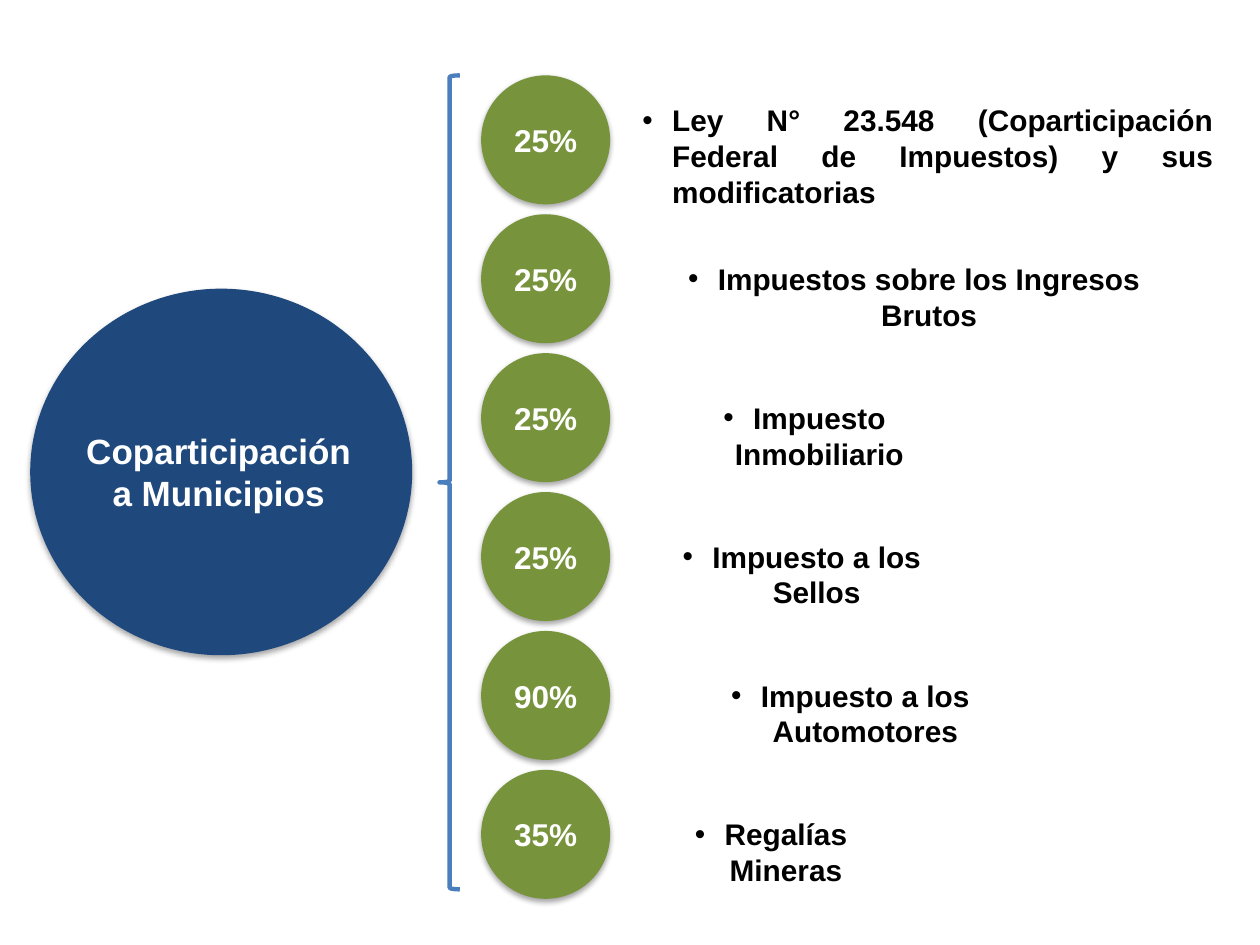
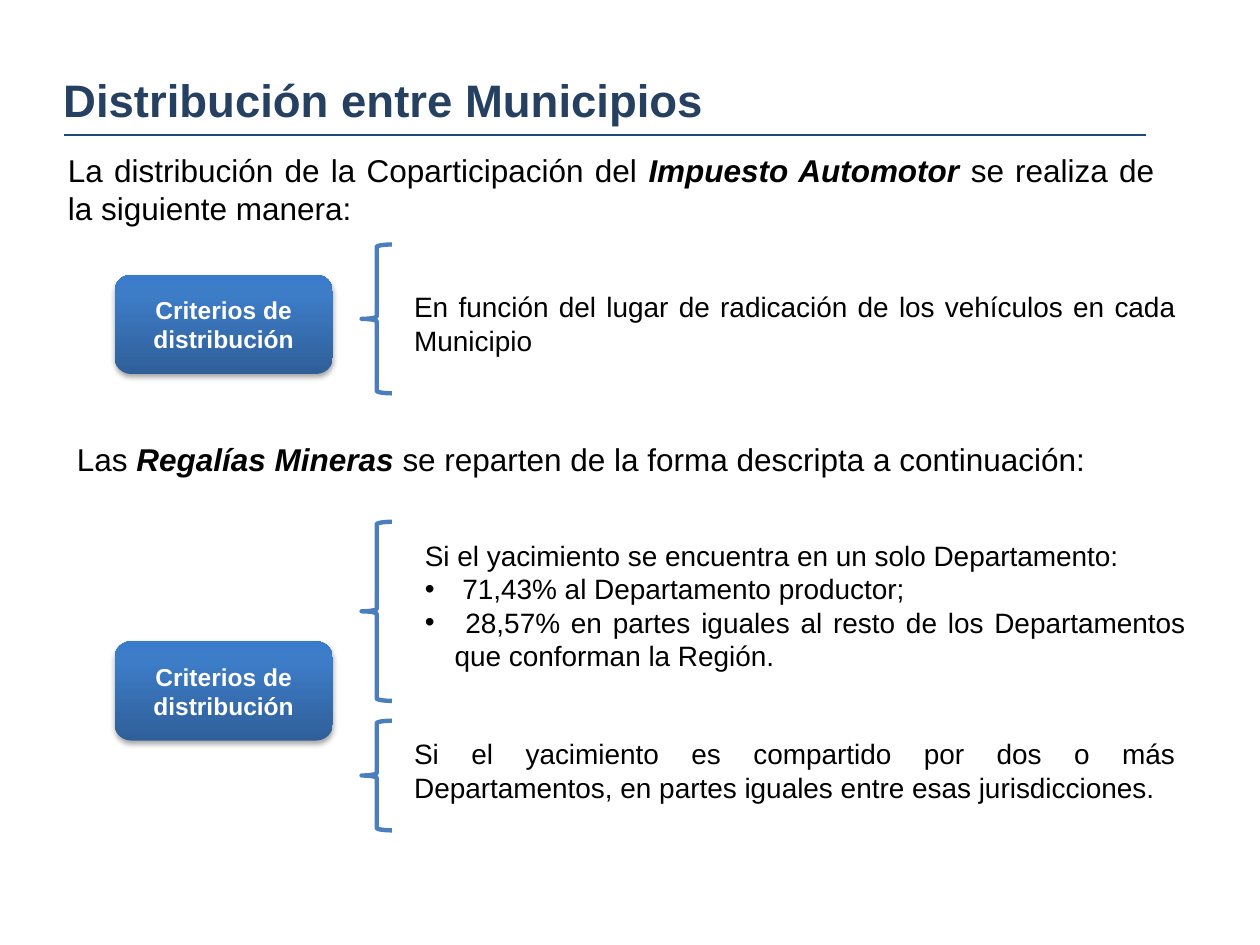
import pptx
import pptx.dml.color
import pptx.enum.dml
import pptx.enum.shapes
import pptx.enum.text
import pptx.oxml.ns
import pptx.util
import copy
from lxml import etree

Cm = pptx.util.Cm
Pt = pptx.util.Pt
ALIGN = pptx.enum.text.PP_ALIGN
ANCHOR = pptx.enum.text.MSO_ANCHOR
SHAPE = pptx.enum.shapes.MSO_SHAPE
qn = pptx.oxml.ns.qn

FONT = "Arial"
NAVY, GREEN, BRACE_BLUE = "1F497D", "77933C", "4B7EBC"
TITLE_BLUE, BLACK, WHITE = "254061", "000000", "FFFFFF"
BUTTON_STOPS = [(0, "2F5F99"), (0.8, "3D7CC7"), (1, "3A7CCB")]
BULLET_INDENT = Cm(0.6)

SOURCES = [  # share, tax, text width in cm
    ("25%", "Ley N° 23.548 (Coparticipación Federal de Impuestos) y sus modificatorias", 12.01),
    ("25%", "Impuestos sobre los Ingresos Brutos", 11.46),
    ("25%", "Impuesto Inmobiliario", 7.04),
    ("25%", "Impuesto a los Sellos", 6.93),
    ("90%", "Impuesto a los Automotores", 8.89),
    ("35%", "Regalías Mineras", 5.69),
]


def rgb(value):
    return pptx.dml.color.RGBColor.from_string(value)


def box(left, top, width, height):
    return Cm(left), Cm(top), Cm(width), Cm(height)


def set_bullet(p, bulleted):
    pPr = p._p.get_or_add_pPr()
    pPr.set("marL", str(BULLET_INDENT if bulleted else 0))
    pPr.set("indent", str(-BULLET_INDENT if bulleted else 0))
    if bulleted:
        etree.SubElement(pPr, qn("a:buFont"), typeface=FONT)
        etree.SubElement(pPr, qn("a:buChar"), char="•")
    else:
        etree.SubElement(pPr, qn("a:buNone"))


def write(tf, lines, size, color=BLACK, bold=False, align=ALIGN.JUSTIFY, anchor=ANCHOR.TOP):
    """Fill a frame; a line starting with • is a bullet, *text* is bold italic."""
    tf.word_wrap = True
    tf.auto_size = pptx.enum.text.MSO_AUTO_SIZE.NONE
    tf.vertical_anchor = anchor
    for i, line in enumerate(lines):
        p = tf.add_paragraph() if i else tf.paragraphs[0]
        set_bullet(p, line.startswith("•"))
        p.alignment = align
        p.space_before = Pt(0)
        for j, piece in enumerate(line.removeprefix("•").split("*")):
            r = p.add_run()
            r.text = piece
            emphasis = j % 2 == 1
            r.font.name, r.font.size = FONT, Pt(size)
            r.font.color.rgb = rgb(color)
            r.font.bold = bold or emphasis
            r.font.italic = emphasis


def add_text(slide, place, lines, size, **style):
    sp = slide.shapes.add_textbox(*box(*place))
    write(sp.text_frame, lines, size, **style)


def add_soft_shadow(sp):
    sp.shadow.inherit = False
    effects = sp._element.spPr.find(qn("a:effectLst"))
    shadow = etree.SubElement(effects, qn("a:outerShdw"), blurRad="40000",
                              dist="23000", dir="5400000", rotWithShape="0")
    color = etree.SubElement(shadow, qn("a:srgbClr"), val=BLACK)
    etree.SubElement(color, qn("a:alpha"), val="35000")


def add_label_shape(slide, kind, place, text, size):
    """Borderless shadowed shape with centred bold white text."""
    sp = slide.shapes.add_shape(kind, *box(*place))
    sp.line.fill.background()
    add_soft_shadow(sp)
    write(sp.text_frame, [text], size, WHITE, True, ALIGN.CENTER, ANCHOR.MIDDLE)
    return sp


def add_circle(slide, place, text, size, color):
    sp = add_label_shape(slide, SHAPE.OVAL, place, text, size)
    sp.fill.solid()
    sp.fill.fore_color.rgb = rgb(color)
    tf = sp.text_frame
    tf.margin_left = tf.margin_right = 0
    return sp


def add_criteria_button(slide, top):
    sp = add_label_shape(slide, SHAPE.ROUNDED_RECTANGLE, (2.31, top, 4.4, 2),
                         "Criterios de distribución", 14)
    sp.fill.gradient()
    sp.fill.gradient_angle = 90
    stop_list = sp._element.spPr.find(qn("a:gradFill")).find(qn("a:gsLst"))
    stop_list.append(copy.deepcopy(stop_list[-1]))
    for stop, (position, color) in zip(sp.fill.gradient_stops, BUTTON_STOPS):
        stop.color.rgb = rgb(color)
        stop.position = position


def add_brace(slide, place):
    sp = slide.shapes.add_shape(SHAPE.LEFT_BRACE, *box(*place))
    sp.fill.background()
    sp.line.color.rgb = rgb(BRACE_BLUE)
    sp.line.width = Pt(2.5)
    sp.shadow.inherit = False


def add_rule(slide, left, right, y):
    line = slide.shapes.add_connector(pptx.enum.shapes.MSO_CONNECTOR.STRAIGHT,
                                      Cm(left), Cm(y), Cm(right), Cm(y))
    line.line.color.rgb = rgb(NAVY)
    line.line.width = Pt(1.5)
    etree.SubElement(line._element.spPr, qn("a:effectLst"))


def fill_placeholder(sp, place, lines, size, **style):
    sp.left, sp.top, sp.width, sp.height = box(*place)
    write(sp.text_frame, lines, size, **style)


def build_shares(prs):
    slide = prs.slides.add_slide(prs.slide_layouts[6])
    add_brace(slide, (8.86, 1.52, 0.41, 16.41))
    hub = add_circle(slide, (0.61, 5.82, 7.7, 7.39), "Coparticipación a Municipios", 20, NAVY)
    hub.text_frame.margin_right = Cm(0.1)

    first_top, step = 1.52, 2.8
    for i, (share, tax, width) in enumerate(SOURCES):
        top = first_top + i * step
        add_circle(slide, (9.7, top, 2.6, 2.6), share, 18, GREEN)
        add_text(slide, (12.7, top + (0.81 if i else 0.41), width, 1.7), ["•" + tax], 17,
                 bold=True, align=ALIGN.CENTER if i else ALIGN.JUSTIFY)


def build_distribution(prs):
    slide = prs.slides.add_slide(prs.slide_layouts[1])
    fill_placeholder(slide.shapes.title, (1.02, 1.32, 22.4, 1.37),
                     ["Distribución entre Municipios"], 26,
                     color=TITLE_BLUE, bold=True, align=ALIGN.LEFT)
    add_rule(slide, 1.3, 23.11, 2.72)

    add_text(slide, (1.12, 2.92, 22.4, 1.8),
             ["La distribución de la Coparticipación del *Impuesto Automotor *"
              "se realiza de la siguiente manera:"], 18)
    add_text(slide, (1.3, 8.74, 22.4, 1.02),
             ["Las *Regalías Mineras *se reparten de la forma descripta a continuación:"], 18)

    for top in (5.54, 12.93):
        add_criteria_button(slide, top)
    for top, height in ((4.93, 3), (10.52, 3.61), (14.53, 2.21)):
        add_brace(slide, (7.29, top, 0.61, height))

    add_text(slide, (8.1, 5.72, 15.85, 1.63),
             ["En función del lugar de radicación de los vehículos en cada Municipio"], 16)
    fill_placeholder(slide.placeholders[1], (8.31, 10.72, 15.85, 3),
                     ["Si el yacimiento se encuentra en un solo Departamento:",
                      "• 71,43% al Departamento productor;",
                      "• 28,57% en partes iguales al resto de los Departamentos "
                      "que conforman la Región."], 16)
    add_text(slide, (8.1, 14.73, 15.85, 1.63),
             ["Si el yacimiento es compartido por dos o más Departamentos, "
              "en partes iguales entre esas jurisdicciones."], 16)


def main():
    prs = pptx.Presentation()
    prs.slide_width, prs.slide_height = Cm(25.4), Cm(19.05)
    build_shares(prs)
    build_distribution(prs)
    prs.save("out.pptx")


if __name__ == "__main__":
    main()
